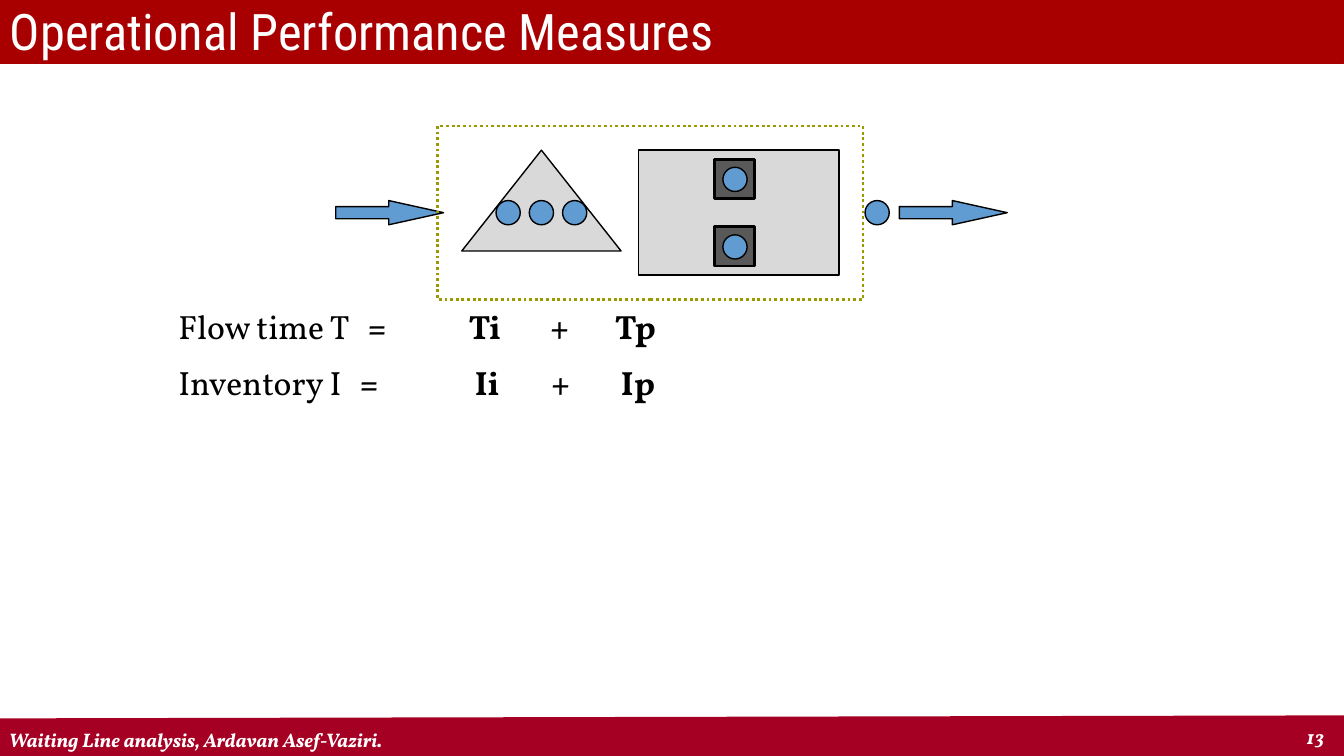
from dataclasses import dataclass
from typing import Optional

from lxml import etree
from pptx import Presentation
from pptx.dml.color import RGBColor
from pptx.enum.dml import MSO_LINE
from pptx.enum.shapes import MSO_CONNECTOR, MSO_SHAPE as Shape
from pptx.enum.text import MSO_ANCHOR as Anchor
from pptx.oxml.ns import qn
from pptx.util import Inches, Pt

COLORS = {
    "title": "A80000", "footer": "A50023", "white": "FFFFFF", "black": "000000",
    "station": "D9D9D9", "server": "595959", "flow": "609CD2", "boundary": "999900",
}
BODY_FONT, TITLE_FONT = "Vollkorn", "Roboto Condensed"
TEXT_INSET = 0.1


@dataclass
class Figure:
    kind: Shape
    left: float
    top: float
    width: float
    height: float
    fill: Optional[str]
    line: str = "black"
    weight: float = 1
    dash: Optional[MSO_LINE] = None
    adjustments: tuple[float, ...] = ()


@dataclass
class Label:
    text: str
    left: float
    top: float
    width: float
    height: float
    font: str
    size: float
    anchor: Anchor
    emphasis: bool = False


@dataclass
class Equation:
    name: str
    terms: tuple[str, ...]
    stops: tuple[float, ...]  # slide positions of the terms


def rgb(name: str) -> RGBColor:
    return RGBColor.from_string(COLORS[name])


def draw_figure(slide, figure: Figure) -> None:
    shape = slide.shapes.add_shape(
        figure.kind, Inches(figure.left), Inches(figure.top),
        Inches(figure.width), Inches(figure.height))
    shape.shadow.inherit = False
    if figure.fill:
        shape.fill.solid()
        shape.fill.fore_color.rgb = rgb(figure.fill)
    else:
        shape.fill.background()
    shape.line.color.rgb = rgb(figure.line)
    shape.line.width = Pt(figure.weight)
    if figure.dash:
        shape.line.dash_style = figure.dash
    for index, value in enumerate(figure.adjustments):
        shape.adjustments[index] = value


def add_text_frame(slide, left: float, top: float, width: float, height: float, anchor: Anchor):
    box = slide.shapes.add_textbox(Inches(left), Inches(top), Inches(width), Inches(height))
    text_frame = box.text_frame
    text_frame.word_wrap = True
    text_frame.vertical_anchor = anchor
    return text_frame


def style_font(font, name: str, size: float, color: str, bold: bool, italic: bool = False) -> None:
    font.name, font.size, font.bold, font.italic = name, Pt(size), bold, italic
    font.color.rgb = rgb(color)


def draw_label(slide, label: Label) -> None:
    text_frame = add_text_frame(
        slide, label.left, label.top, label.width, label.height, label.anchor)
    text_frame.text = label.text
    style_font(text_frame.paragraphs[0].runs[0].font, label.font, label.size,
               "white", label.emphasis, label.emphasis)


def draw_footer_band(slide) -> None:
    band = slide.shapes.add_connector(
        MSO_CONNECTOR.STRAIGHT, Inches(-0.01), Inches(7.33), Inches(13.36), Inches(7.3))
    band.line.color.rgb = rgb("footer")
    band.line.width = Pt(29.25)
    etree.SubElement(band.line._get_or_add_ln().getparent(), qn("a:effectLst"))


def draw_equations(slide, equations: list[Equation]) -> None:
    left = 1.67
    text_frame = add_text_frame(slide, left, 2.99, 9.75, 1.13, Anchor.TOP)
    for index, equation in enumerate(equations):
        paragraph = text_frame.add_paragraph() if index else text_frame.paragraphs[0]
        tabs = etree.SubElement(paragraph._p.get_or_add_pPr(), qn("a:tabLst"))
        for stop in equation.stops:
            position = Inches(stop - left - TEXT_INSET)
            etree.SubElement(tabs, qn("a:tab"), pos=str(int(position)), algn="l")
        paragraph.space_before = Pt(4.8 if index else 0)
        paragraph.space_after = Pt(6)
        formula = "".join("\t" + term for term in equation.terms)
        for text, bold in ((equation.name, False), (formula, True)):
            run = paragraph.add_run()
            run.text = text
            style_font(run.font, BODY_FONT, 24, "black", bold)


def flow_unit(left: float, top: float) -> Figure:
    return Figure(Shape.OVAL, left, top, 0.24, 0.24, "flow")


def flow_arrow(left: float) -> Figure:
    return Figure(Shape.RIGHT_ARROW, left, FLOW_TOP, 1.07, 0.24, "flow",
                  adjustments=(0.5, 2.265))


FLOW_TOP = 1.99
SERVER_TOPS = (1.58, 2.25)

TITLE_BAR = Figure(Shape.RECTANGLE, 0, -0.01, 13.33, 0.64, "title", "title", 0.75)

LABELS = [
    Label("Waiting Line analysis, Ardavan Asef-Vaziri.", -0.01, 7.16, 10.85, 0.34,
          BODY_FONT, 14, Anchor.BOTTOM, True),
    Label("13", 12.86, 7.13, 0.47, 0.34, BODY_FONT, 14, Anchor.BOTTOM, True),
    Label("Operational Performance Measures", 0, 0, 13.33, 0.6,
          TITLE_FONT, 36, Anchor.MIDDLE),
]

PROCESS = [
    # Waiting line and service station
    Figure(Shape.ISOSCELES_TRIANGLE, 4.58, 1.49, 1.58, 1, "station"),
    Figure(Shape.RECTANGLE, 6.33, 1.49, 1.99, 1.24, "station"),
    *(Figure(Shape.RECTANGLE, 7.09, top, 0.39, 0.39, "server", weight=2)
      for top in SERVER_TOPS),
    # Units waiting, in service and leaving
    *(flow_unit(4.92 + 0.33 * position, FLOW_TOP) for position in range(3)),
    *(flow_unit(7.17, top + 0.08) for top in SERVER_TOPS),
    flow_unit(8.58, FLOW_TOP),
    # Flow out, flow in and the process boundary
    flow_arrow(8.92),
    flow_arrow(3.33),
    Figure(Shape.RECTANGLE, 4.34, 1.25, 4.22, 1.72, None, "boundary", 2, MSO_LINE.ROUND_DOT),
]

EQUATIONS = [
    Equation("Flow time T", ("=", "Ti", "+", "Tp"), (3.65, 4.65, 5.46, 6.1)),
    Equation("Inventory I", ("=", "Ii", "+", "Ip"), (3.57, 4.71, 5.47, 6.16)),
]


def main() -> None:
    presentation = Presentation()
    presentation.slide_width, presentation.slide_height = Inches(13.33), Inches(7.5)
    slide = presentation.slides.add_slide(presentation.slide_layouts[6])

    # Title bar and footer
    draw_footer_band(slide)
    draw_figure(slide, TITLE_BAR)
    for label in LABELS:
        draw_label(slide, label)

    # Process diagram and equations
    for figure in PROCESS:
        draw_figure(slide, figure)
    draw_equations(slide, EQUATIONS)

    presentation.save("out.pptx")


if __name__ == "__main__":
    main()
